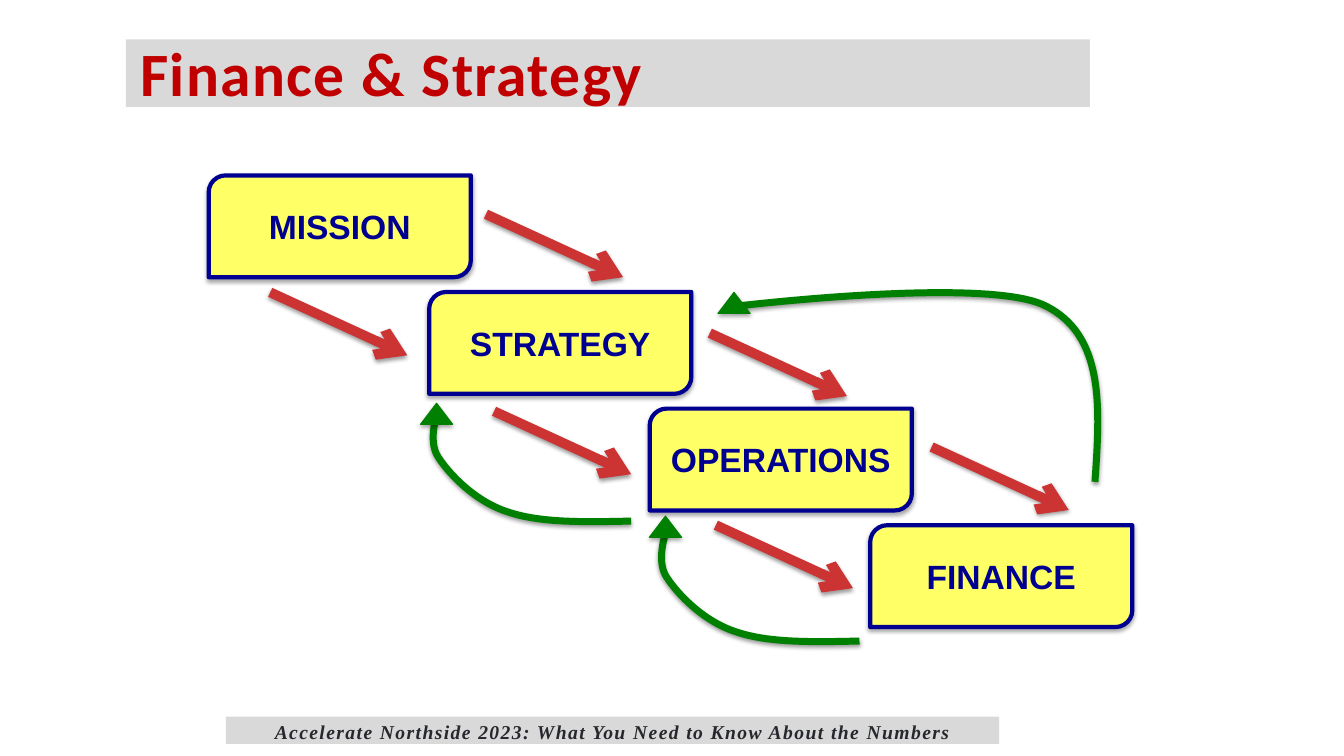
from dataclasses import dataclass

from lxml.etree import SubElement
from pptx import Presentation
from pptx.dml.color import RGBColor
from pptx.enum.shapes import MSO_CONNECTOR, MSO_SHAPE
from pptx.enum.text import MSO_ANCHOR, PP_ALIGN
from pptx.oxml.ns import qn
from pptx.util import Emu, Inches, Pt

YELLOW = RGBColor(0xFF, 0xFF, 0x66)
NAVY = RGBColor(0x00, 0x00, 0x90)
RED = RGBColor(0xCC, 0x33, 0x33)
GREEN = RGBColor(0x00, 0x80, 0x00)
GREY = RGBColor(0xD9, 0xD9, 0xD9)
DARK_RED = RGBColor(0xC0, 0x00, 0x00)
INK = RGBColor(0x26, 0x28, 0x2D)

CELL = Inches(0.1)
Point = tuple[float, float]


@dataclass(frozen=True)
class Area:
    col: float
    row: float
    cols: float
    rows: float


@dataclass(frozen=True)
class TextStyle:
    font: str
    size: float
    color: RGBColor
    italic: bool = False
    spacing: float = 0


@dataclass(frozen=True)
class Banner:
    text: str
    area: Area
    style: TextStyle
    align: PP_ALIGN
    inset_left: float
    inset_top: float


@dataclass(frozen=True)
class Feedback:
    points: tuple[Point, ...]
    head: Point


STEPS = ("MISSION", "STRATEGY", "OPERATIONS", "FINANCE")
STEP_ORIGIN: Point = (20.7, 17.4)
STEP_SHIFT: Point = (21.87, 11.57)
STEP_STYLE = TextStyle("Arial", 24, NAVY)

ARROW_STARTS: tuple[Point, ...] = ((26.8, 29), (49, 40.8), (71, 52.1))
ARROW_PAIR: tuple[Point, ...] = ((0, 0), (21.4, -7.75))
ARROW_RUN: Point = (13.6, 6.25)

SHORT_LOOP: tuple[Point, ...] = (
    (62.6, 51.7), (58.1, 51.8), (53.6, 51.9), (50.4, 50.8), (47.2, 49.8),
    (44.6, 47.1), (43.5, 45.4), (42.3, 43.7), (43.5, 40.6), (43.5, 40.6),
)
LONG_LOOP: tuple[Point, ...] = (
    (108.6, 47.8), (109.1, 40.5), (109.6, 33.2), (103.6, 30.3),
    (97.6, 27.4), (72.8, 30.4), (72.8, 30.4),
)
FEEDBACKS = (
    Feedback(LONG_LOOP, (71.2, 29)),
    Feedback(tuple((x + 22.65, y + 11.9) for x, y in SHORT_LOOP), (64.4, 51.2)),
    Feedback(SHORT_LOOP, (41.7, 40)),
)

BANNERS = (
    Banner("Accelerate Northside 2023: What You Need to Know About the Numbers",
           Area(22.4, 71.1, 76.7, 2.7),
           TextStyle("Times New Roman", 14, INK, True, 1), PP_ALIGN.CENTER, 0, 0.8),
    Banner("Finance & Strategy", Area(12.5, 3.9, 95.6, 6.7),
           TextStyle("Calibri", 44, DARK_RED, False, 1), PP_ALIGN.LEFT, 1.4, 1),
)


def grid(cells: float) -> Emu:
    return Emu(round(cells * CELL))


def add_shadow(sp, alpha: int, distance: float) -> None:
    spPr = sp._element.spPr
    effects = spPr.find(qn("a:effectLst"))
    if effects is None:
        effects = SubElement(spPr, qn("a:effectLst"))
    outer = SubElement(effects, qn("a:outerShdw"), blurRad=str(Pt(3.1)),
                       dist=str(Pt(distance)), dir="5400000", rotWithShape="0")
    color = SubElement(outer, qn("a:srgbClr"), val="000000")
    SubElement(color, qn("a:alpha"), val=str(alpha * 1000))


def add_block(shapes, kind: MSO_SHAPE, area: Area, fill: RGBColor):
    sp = shapes.add_shape(kind, grid(area.col), grid(area.row),
                          grid(area.cols), grid(area.rows))
    sp.shadow.inherit = False
    sp.fill.solid()
    sp.fill.fore_color.rgb = fill
    sp.line.fill.background()
    return sp


def set_line(sp, color: RGBColor, width: float) -> None:
    sp.line.color.rgb = color
    sp.line.width = Pt(width)


def write(sp, text: str, style: TextStyle, align: PP_ALIGN):
    tf = sp.text_frame
    tf.word_wrap = True
    tf.text = text
    p = tf.paragraphs[0]
    p.alignment = align
    r = p.runs[0]
    r.font.name = style.font
    r.font.size = Pt(style.size)
    r.font.bold = True
    r.font.italic = style.italic
    r.font.color.rgb = style.color
    if style.spacing:
        r.font._element.set("spc", str(round(style.spacing * 100)))
    return tf


def add_step(shapes, index: int, name: str) -> None:
    col, row = (o + index * d for o, d in zip(STEP_ORIGIN, STEP_SHIFT))
    sp = add_block(shapes, MSO_SHAPE.ROUND_2_DIAG_RECTANGLE,
                   Area(col, row, 26, 10.1), YELLOW)
    set_line(sp, NAVY, 3)
    add_shadow(sp, 35, 1.8)
    tf = write(sp, name, STEP_STYLE, PP_ALIGN.CENTER)
    tf.vertical_anchor = MSO_ANCHOR.MIDDLE


def add_arrow(shapes, col: float, row: float) -> None:
    line = shapes.add_connector(MSO_CONNECTOR.STRAIGHT, grid(col), grid(row),
                                grid(col + ARROW_RUN[0]), grid(row + ARROW_RUN[1]))
    set_line(line, RED, 7)
    SubElement(line.line._get_or_add_ln(), qn("a:tailEnd"), type="arrow")
    add_shadow(line, 38, 1.6)


def add_curve(shapes, points: tuple[Point, ...]) -> None:
    start, *rest = [(grid(x), grid(y)) for x, y in points]
    builder = shapes.build_freeform(*start)
    builder.add_line_segments(rest, close=False)
    sp = builder.convert_to_shape()
    segments = list(sp._element.iter(qn("a:lnTo")))
    outline = segments[0].getparent()
    for i in range(0, len(segments), 3):
        curve = SubElement(outline, qn("a:cubicBezTo"))
        for segment in segments[i:i + 3]:
            curve.append(segment[0])
            outline.remove(segment)
    sp.shadow.inherit = False
    sp.fill.background()
    set_line(sp, GREEN, 5)
    add_shadow(sp, 38, 1.6)


def add_head(shapes, head: Point) -> None:
    sp = add_block(shapes, MSO_SHAPE.ISOSCELES_TRIANGLE, Area(*head, 3.2, 2.1), GREEN)
    set_line(sp, GREEN, 0.75)
    add_shadow(sp, 35, 1.8)


def add_banner(shapes, banner: Banner) -> None:
    sp = add_block(shapes, MSO_SHAPE.RECTANGLE, banner.area, GREY)
    tf = write(sp, banner.text, banner.style, banner.align)
    tf.vertical_anchor = MSO_ANCHOR.TOP
    tf.margin_left, tf.margin_top = grid(banner.inset_left), grid(banner.inset_top)
    tf.margin_right = tf.margin_bottom = 0
    tf.paragraphs[0].line_spacing = 0.8


def main() -> None:
    prs = Presentation()
    prs.slide_width, prs.slide_height = Inches(13.33), Inches(7.5)
    shapes = prs.slides.add_slide(prs.slide_layouts[6]).shapes
    for index, name in enumerate(STEPS):
        add_step(shapes, index, name)
    for col, row in ARROW_STARTS:
        for dx, dy in ARROW_PAIR:
            add_arrow(shapes, col + dx, row + dy)
    for feedback in FEEDBACKS:
        add_curve(shapes, feedback.points)
    for feedback in FEEDBACKS:
        add_head(shapes, feedback.head)
    for banner in BANNERS:
        add_banner(shapes, banner)
    prs.save("out.pptx")


if __name__ == "__main__":
    main()
